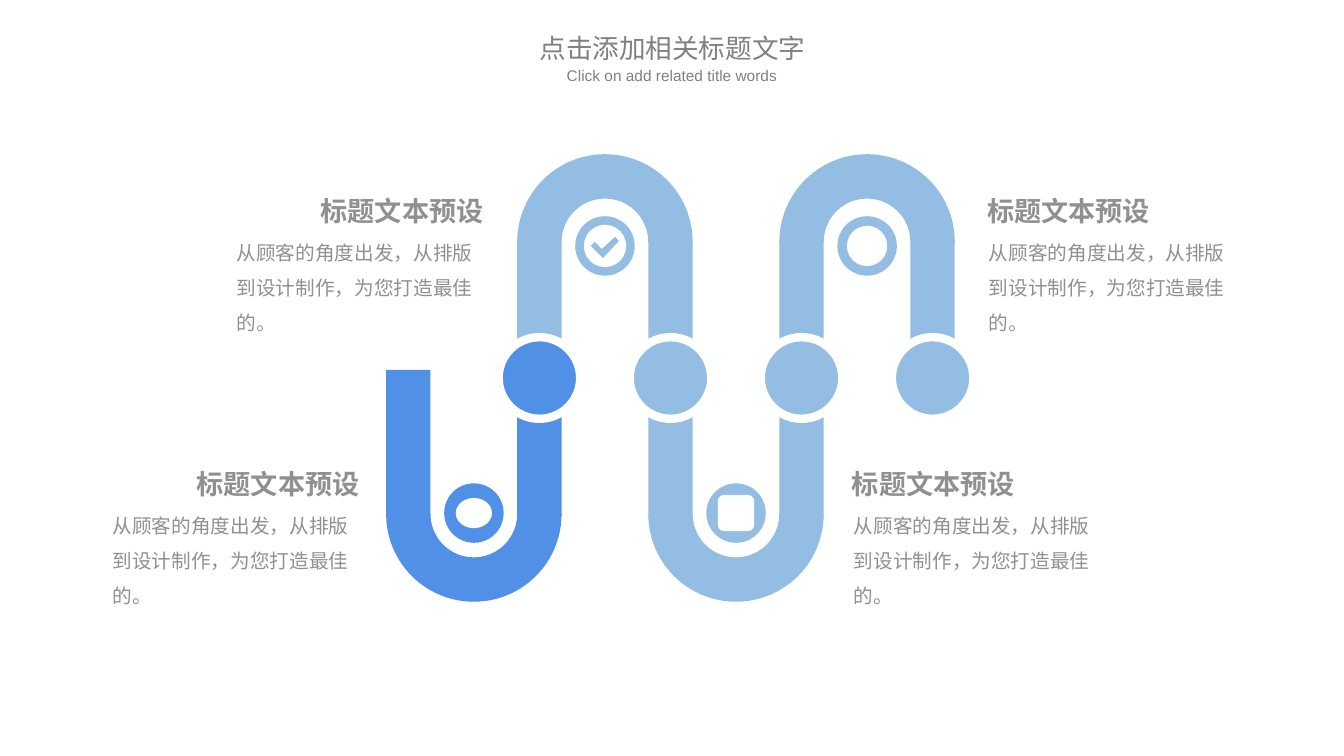
from pptx import Presentation
from pptx import util as u
from pptx.dml.color import RGBColor
from pptx.enum import shapes, text
from lxml import etree

SLIDE_W, SLIDE_H = 13.33, 7.5
BLUE, PALE, WHITE, GREY, TITLE_GREY = "5190E7", "94BDE3", "FFFFFF", "909090", "808080"
CJK, LATIN = "Noto Sans CJK SC", "Arial"
LEFT, PITCH, BAND = 3.83, 1.3, 0.44
ARCH, LEG, DOT, BADGE = 1.74, 1.45, 0.81, 0.59
ROWS = {
    "up": {"arc": 1.53, "leg": 2.38, "badge": 2.44, "angles": (108, 0)},
    "down": {"arc": 4.23, "leg": 3.67, "badge": 5.09, "angles": (0, 108)},
}
DOT_Y = 3.75
KIND = shapes.MSO_SHAPE
ALIGN, ANCHOR = text.PP_ALIGN, text.MSO_ANCHOR

HEADING = "标题文本预设"
BODY = "从顾客的角度出发，从排版到设计制作，为您打造最佳的。"
TITLES = [
    ("点击添加相关标题文字", (5.08, 0.28, 3.18, 0.39), 19, CJK, ANCHOR.MIDDLE),
    ("Click on add related title words", (5.46, 0.61, 2.41, 0.39), 11, LATIN, ANCHOR.TOP),
]
NOTES = [
    (2.25, 1.95, 2.63, ALIGN.RIGHT),
    (9.71, 1.95, 2.69, ALIGN.LEFT),
    (1.02, 4.66, 2.63, ALIGN.RIGHT),
    (8.37, 4.66, 2.69, ALIGN.LEFT),
]
BENDS = [
    ("down", BLUE, KIND.OVAL, (0.36, 0.3)),
    ("up", PALE, KIND.OVAL, (0.42, 0.42)),
    ("down", PALE, KIND.ROUNDED_RECTANGLE, (0.36, 0.36)),
    ("up", PALE, KIND.OVAL, (0.4, 0.4)),
]
TICK_BEND = 1
TICK = [(-0.14, 0), (-0.1, -0.04), (-0.03, 0.03), (0.1, -0.09), (0.14, -0.05), (-0.02, 0.12)]


def rgb(value):
    """Turn a hex string into a colour."""
    return RGBColor.from_string(value)


def paint(shape, color, outline=None):
    """Give a shape a flat fill and an optional white rim."""
    shape.shadow.inherit = False
    shape.fill.solid()
    shape.fill.fore_color.rgb = rgb(color)
    if outline:
        shape.line.color.rgb = rgb(WHITE)
        shape.line.width = u.Pt(outline)
    else:
        shape.line.fill.background()
    return shape


def add_part(slide, kind, box, color, outline=None):
    """Add a preset shape at a box in inches."""
    return paint(slide.shapes.add_shape(kind, *map(u.Inches, box)), color, outline)


def add_centred(slide, kind, centre, size, color, outline=None):
    """Add a preset shape around a centre point."""
    corner = [c - s / 2 for c, s in zip(centre, size)]
    return add_part(slide, kind, (*corner, *size), color, outline)


def add_words(slide, words, box, font, align, anchor, insets=(0.1, 0.05), spacing=None):
    """Add one wrapped paragraph of text."""
    frame = slide.shapes.add_textbox(*map(u.Inches, box)).text_frame
    side, edge = map(u.Inches, insets)
    layout = {"word_wrap": True, "vertical_anchor": anchor, "margin_left": side,
              "margin_right": side, "margin_top": edge, "margin_bottom": edge}
    for name, value in layout.items():
        setattr(frame, name, value)
    line = frame.paragraphs[0]
    line.alignment, line.line_spacing = align, spacing
    run = line.add_run()
    run.text = words
    color = font.pop("color")
    for name, value in font.items():
        setattr(run.font, name, value)
    run.font.color.rgb = rgb(color)
    props = run._r.get_or_add_rPr()
    namespace = etree.QName(props).namespace
    etree.SubElement(props, f"{{{namespace}}}ea", typeface=font["name"])


def add_bend(slide, column, row, color):
    """Add a half ring with its two legs."""
    x = LEFT + column * PITCH
    arc = add_part(slide, KIND.BLOCK_ARC, (x, row["arc"], ARCH, ARCH), color)
    for index, value in enumerate((*row["angles"], BAND / ARCH)):
        arc.adjustments[index] = value
    for leg_x in (x, x + PITCH):
        add_part(slide, KIND.RECTANGLE, (leg_x, row["leg"], BAND, LEG), color)


def add_badge(slide, column, row, color, mark, size):
    """Add the round badge inside a bend."""
    centre = (LEFT + column * PITCH + ARCH / 2, row["badge"])
    add_centred(slide, KIND.OVAL, centre, (BADGE, BADGE), color)
    add_centred(slide, mark, centre, size, WHITE)
    if column == TICK_BEND:
        points = [tuple(u.Inches(c + d) for c, d in zip(centre, step)) for step in TICK]
        builder = slide.shapes.build_freeform(*points[0])
        builder.add_line_segments(points[1:], close=True)
        paint(builder.convert_to_shape(), color)


def main():
    """Build the slide."""
    deck = Presentation()
    deck.slide_width, deck.slide_height = u.Inches(SLIDE_W), u.Inches(SLIDE_H)
    slide = deck.slides.add_slide(deck.slide_layouts[6])

    for x, y, width, align in NOTES:
        add_words(slide, BODY, (x, y + 0.27, width, 1.51),
                  {"name": CJK, "size": u.Pt(14), "color": GREY},
                  ALIGN.LEFT, ANCHOR.TOP, spacing=1.5)
        add_words(slide, HEADING, (x, y, width, 0.27),
                  {"name": CJK, "size": u.Pt(19.4), "bold": True, "color": GREY},
                  align, ANCHOR.MIDDLE, insets=(0.08, 0))

    for column, (row, color, _, _) in enumerate(BENDS):
        add_bend(slide, column, ROWS[row], color)
    for column, (_, color, _, _) in enumerate(BENDS):
        centre = (LEFT + (column + 1) * PITCH + BAND / 2, DOT_Y)
        add_centred(slide, KIND.OVAL, centre, (DOT, DOT), color, outline=6)
    for column, (row, color, mark, size) in enumerate(BENDS):
        add_badge(slide, column, ROWS[row], color, mark, size)

    for words, box, size, face, anchor in TITLES:
        add_words(slide, words, box, {"name": face, "size": u.Pt(size), "color": TITLE_GREY},
                  ALIGN.CENTER, anchor)
    deck.save("out.pptx")


if __name__ == "__main__":
    main()
